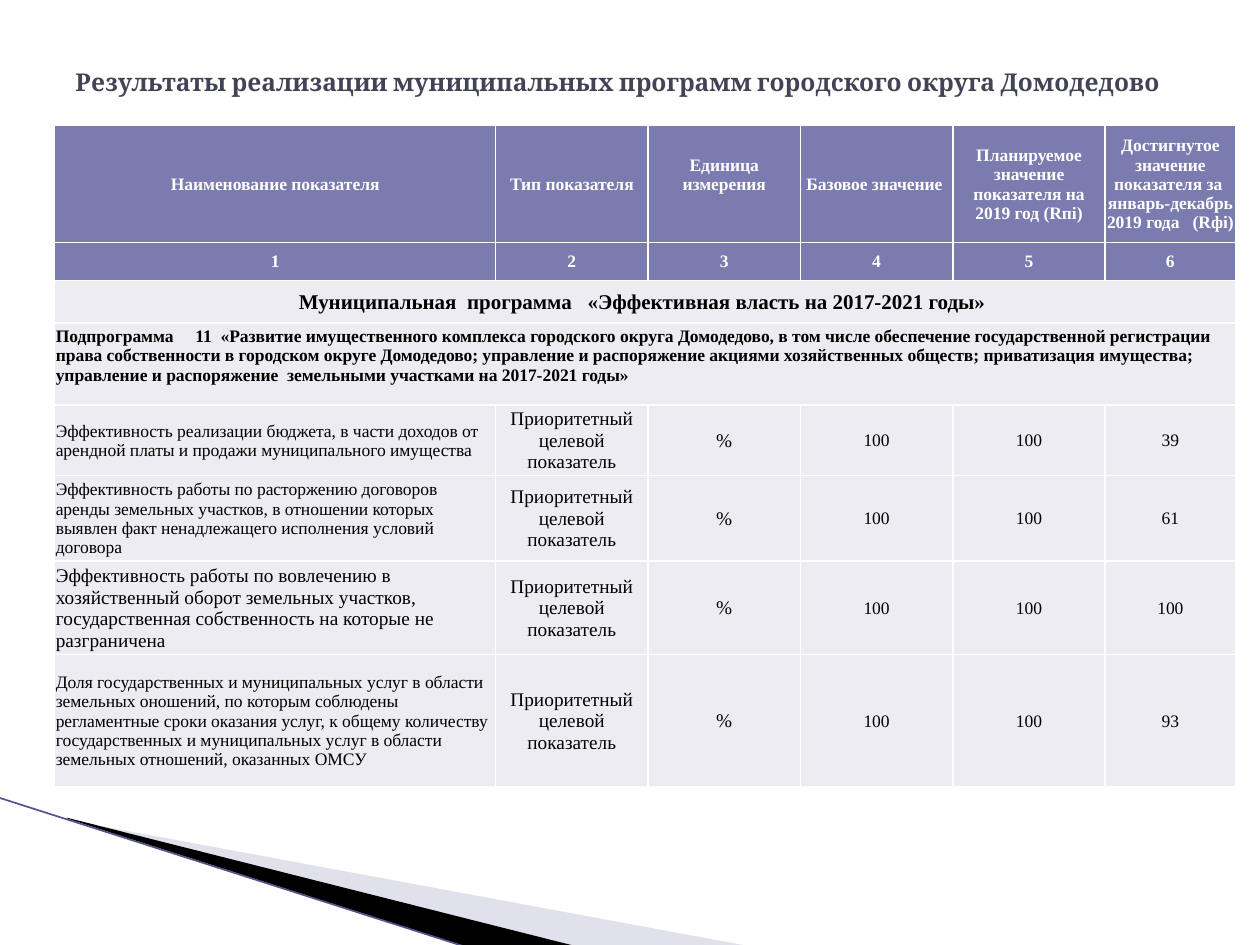
import pptx
import pptx.dml.color
import pptx.enum.shapes
import pptx.enum.text
import pptx.oxml
import pptx.oxml.ns
import pptx.util
from lxml import etree

Pt = pptx.util.Pt
ALIGN = pptx.enum.text.PP_ALIGN
MIDDLE = pptx.enum.text.MSO_ANCHOR.MIDDLE
SERIF = "Times New Roman"
HEAD_FILL, BODY_FILL = "7A7BAE", "ECECF2"
COL_WIDTHS = [252] + [87.1] * 4 + [74.5]
ROW_HEIGHTS = [67, 21.6, 24.5, 45, 37.4, 47.3, 49.7, 75.4]
HEADERS = [
    "Наименование показателя",
    "Тип показателя",
    "Единица измерения",
    "Базовое значение ",
    "Планируемое значение показателя на 2019 год (Rпi)",
    "Достигнутое значение показателя за  январь-декабрь 2019 года   (Rфi)",
]
PROGRAM = "Муниципальная  программа   «Эффективная власть на 2017-2021 годы» "
SUBPROGRAM = (
    "Подпрограмма     11  «Развитие имущественного комплекса городского округа Домодедово, "
    "в том числе обеспечение государственной регистрации права собственности в городском округе "
    "Домодедово; управление и распоряжение акциями хозяйственных обществ; приватизация имущества; "
    "управление и распоряжение  земельными участками на 2017-2021 годы»"
)
INDICATORS = [
    ("Эффективность реализации бюджета, в части доходов от арендной платы и продажи "
     "муниципального имущества", 10, "39"),
    ("Эффективность работы по расторжению договоров аренды земельных участков, в отношении "
     "которых выявлен факт ненадлежащего исполнения условий договора", 10, "61"),
    ("Эффективность работы по вовлечению в хозяйственный оборот земельных участков, "
     "государственная собственность на которые не разграничена", 11, "100"),
    ("Доля государственных и муниципальных услуг в области земельных оношений, по которым "
     "соблюдены регламентные сроки оказания услуг, к общему количеству государственных и "
     "муниципальных услуг в области земельных отношений, оказанных ОМСУ", 11 - 1, "93"),
]


def rgb(value):
    """Return the colour for a hex string."""
    return pptx.dml.color.RGBColor.from_string(value)


def write(tf, text, size, color, bold=False, align=ALIGN.CENTER, name=SERIF):
    """Write one formatted paragraph into a text frame."""
    p = tf.paragraphs[0]
    p.alignment = align
    r = p.add_run()
    r.text = text
    for key, value in {"size": Pt(size), "bold": bold, "name": name}.items():
        setattr(r.font, key, value)
    r.font.color.rgb = rgb(color)


def add_borders(cell):
    """Give a cell white borders on all four sides."""
    for side in ("lnL", "lnR", "lnT", "lnB"):
        cell._tc.get_or_add_tcPr().append(pptx.oxml.parse_xml(
            f'<a:{side} {pptx.oxml.ns.nsdecls("a")} w="{Pt(1)}">'
            f'<a:solidFill><a:srgbClr val="FFFFFF"/></a:solidFill></a:{side}>'))


def fill_cell(cell, text, fill, size=10, color="000000", bold=False,
              align=ALIGN.CENTER, bottom=0):
    """Fill and write one table cell."""
    formats = {"margin_left": Pt(0.7), "margin_right": Pt(0.7), "margin_top": Pt(0.7),
               "margin_bottom": Pt(bottom), "vertical_anchor": MIDDLE}
    for key, value in formats.items():
        setattr(cell, key, value)
    cell.fill.solid()
    cell.fill.fore_color.rgb = rgb(fill)
    write(cell.text_frame, text, size, color, bold, align)


def add_wedge(s, left, top, points, color, opacity=100):
    """Draw a filled polygon from points relative to the given corner."""
    corners = [(Pt(left + x), Pt(top + y)) for x, y in points]
    builder = s.shapes.build_freeform(*corners[0])
    builder.add_line_segments(corners[1:], close=True)
    sp = builder.convert_to_shape()
    sp.shadow.inherit = False
    sp.fill.solid()
    sp.fill.fore_color.rgb = rgb(color)
    sp.line.fill.background()
    if opacity < 100:
        tag = sp._element.spPr.find(".//" + pptx.oxml.ns.qn("a:srgbClr"))
        etree.SubElement(tag, pptx.oxml.ns.qn("a:alpha"), val=str(opacity * 1000))


def add_corner(s, left, top):
    """Draw the wedges and the slanted line of the lower left corner."""
    add_wedge(s, left, top, [(39.6, 12.9), (428.4, 84.9), (328.3, 84.9), (39.6, 12.2)],
              "B6B6D1", 40)
    add_wedge(s, left, top, [(38.2, 11.5), (329, 84.9), (267.8, 85.6), (38.9, 12.2)],
              "000000")
    line = s.shapes.add_connector(pptx.enum.shapes.MSO_CONNECTOR.STRAIGHT, Pt(left - 0.7),
                                  Pt(top), Pt(left + 267.1), Pt(top + 85.6))
    line.line.color.rgb = rgb("53548A")
    line.line.width = Pt(0.95)
    etree.SubElement(line._element.spPr, pptx.oxml.ns.qn("a:effectLst"))


def add_title(s, left, top, width, height):
    """Place the slide title."""
    tf = s.shapes.add_textbox(Pt(left), Pt(top), Pt(width), Pt(height)).text_frame
    tf.word_wrap = True
    tf.vertical_anchor = MIDDLE
    write(tf, "Результаты реализации муниципальных программ городского округа Домодедово",
          14, "424456", True, ALIGN.LEFT, "Cambria")


def add_results(s, left, top):
    """Place the table of indicators."""
    table = s.shapes.add_table(len(ROW_HEIGHTS), len(COL_WIDTHS), Pt(left), Pt(top),
                               Pt(sum(COL_WIDTHS)), Pt(sum(ROW_HEIGHTS))).table
    for col, width in zip(table.columns, COL_WIDTHS):
        col.width = Pt(width)
    for row, height in zip(table.rows, ROW_HEIGHTS):
        row.height = Pt(height)
    for cell in table.iter_cells():
        add_borders(cell)
    for i, header in enumerate(HEADERS):
        fill_cell(table.cell(0, i), header, HEAD_FILL, color="FFFFFF", bold=True,
                  bottom=11 if i == 2 else 0)
        fill_cell(table.cell(1, i), str(i + 1), HEAD_FILL, color="FFFFFF", bold=True)
    for i in (2, 3):
        table.cell(i, 0).merge(table.cell(i, len(HEADERS) - 1))
    fill_cell(table.cell(2, 0), PROGRAM, BODY_FILL, 12, bold=True)
    fill_cell(table.cell(3, 0), SUBPROGRAM, BODY_FILL, bold=True, align=ALIGN.LEFT, bottom=10)
    for i, (name, size, result) in enumerate(INDICATORS, 4):
        fill_cell(table.cell(i, 0), name, BODY_FILL, size, align=ALIGN.LEFT)
        values = ["Приоритетный целевой показатель", "%", "100", "100", result]
        for j, value in enumerate(values, 1):
            fill_cell(table.cell(i, j), value, BODY_FILL, 11 if j < 3 else 10)


def main():
    """Build and save the slide."""
    prs = pptx.Presentation()
    prs.slide_width, prs.slide_height = Pt(720), Pt(540)
    s = prs.slides.add_slide(prs.slide_layouts[6])
    add_corner(s, 0, 455.8)
    add_title(s, 36, 21.6, 648, 49.7)
    add_results(s, 31.2, 71.6)
    prs.save("out.pptx")


if __name__ == "__main__":
    main()
